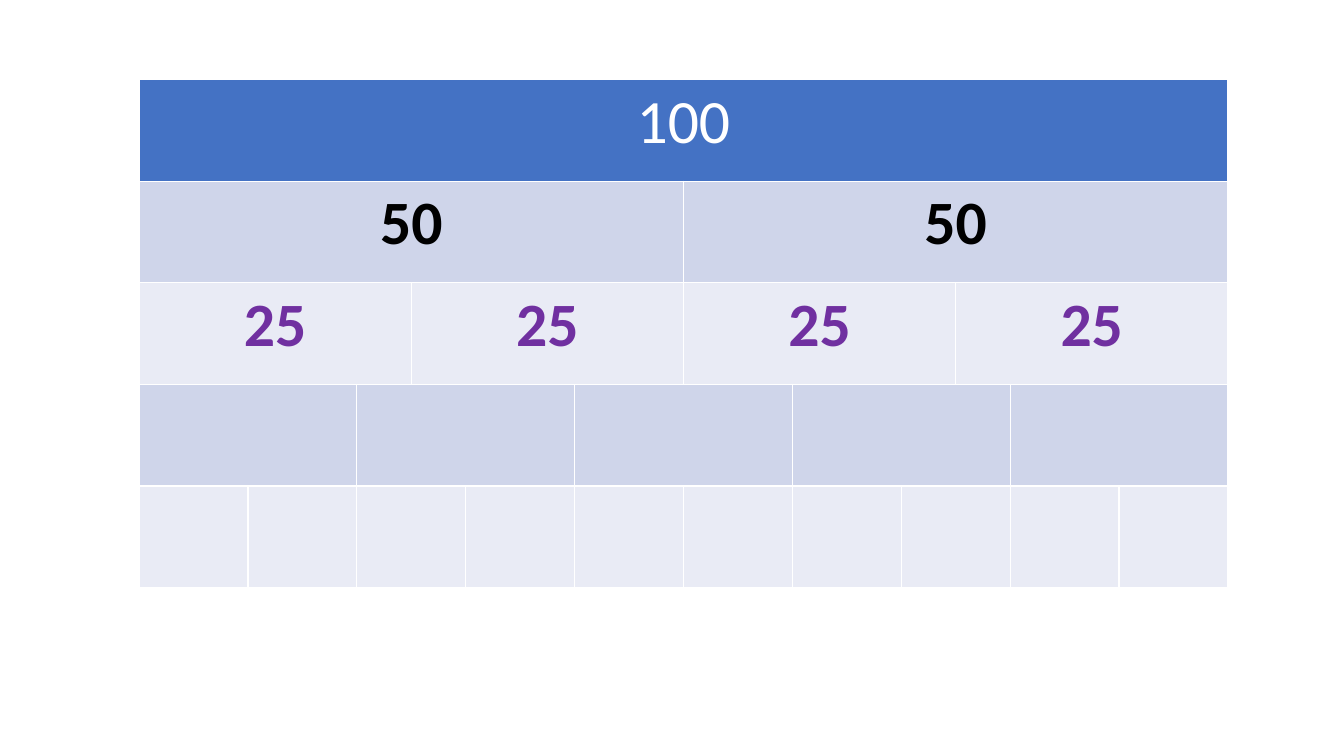
from itertools import accumulate

from pptx import Presentation
from pptx.dml.color import RGBColor
from pptx.enum.text import PP_ALIGN
from pptx.util import Pt

CENTER = PP_ALIGN.CENTER
PX = 9144
SLIDE_WIDTH, SLIDE_HEIGHT = 1333, 750
BLANK_LAYOUT = 6
COLUMN_UNITS = [2, 2, 1, 1, 2, 2, 2, 2, 1, 1, 2, 2]
FRACTION_ROWS = [
    (1, "100", "4472C4", "FFFFFF", False),
    (2, "50", "CFD5EA", "000000", True),
    (4, "25", "E9EBF5", "7030A0", True),
    (5, "", "CFD5EA", "000000", False),
    (10, "", "E9EBF5", "000000", False),
]


def px(length):
    return round(length * PX)


def color(hex_value):
    return RGBColor.from_string(hex_value)


def write(frame, text, size=44, font="Calibri", fill="000000", bold=False, align=CENTER):
    paragraph = frame.paragraphs[0]
    paragraph.alignment = align
    run = paragraph.add_run()
    run.text = text
    run.font.size = Pt(size)
    run.font.name = font
    run.font.bold = bold
    run.font.color.rgb = color(fill)


def add_fraction_wall(slide, left, top, width, height):
    wall = slide.shapes.add_table(
        len(FRACTION_ROWS), len(COLUMN_UNITS), px(left), px(top), px(width), px(height)
    ).table
    edges = list(accumulate(COLUMN_UNITS, initial=0))
    total = edges[-1]
    for column, units in zip(wall.columns, COLUMN_UNITS):
        column.width = px(width * units / total)
    for row_index, (parts, label, row_fill, label_color, bold) in enumerate(FRACTION_ROWS):
        wall.rows[row_index].height = px(height / len(FRACTION_ROWS))
        for cell in wall.rows[row_index].cells:
            cell.fill.solid()
            cell.fill.fore_color.rgb = color(row_fill)
        starts = [edges.index(total * part // parts) for part in range(parts + 1)]
        for first, following in zip(starts, starts[1:]):
            brick = wall.cell(row_index, first)
            if following - first > 1:
                brick.merge(wall.cell(row_index, following - 1))
            if label:
                write(brick.text_frame, label, fill=label_color, bold=bold)


def main():
    deck = Presentation()
    deck.slide_width, deck.slide_height = px(SLIDE_WIDTH), px(SLIDE_HEIGHT)
    slide = deck.slides.add_slide(deck.slide_layouts[BLANK_LAYOUT])
    add_fraction_wall(slide, left=138, top=79, width=1080, height=504)
    deck.save("out.pptx")


if __name__ == "__main__":
    main()
